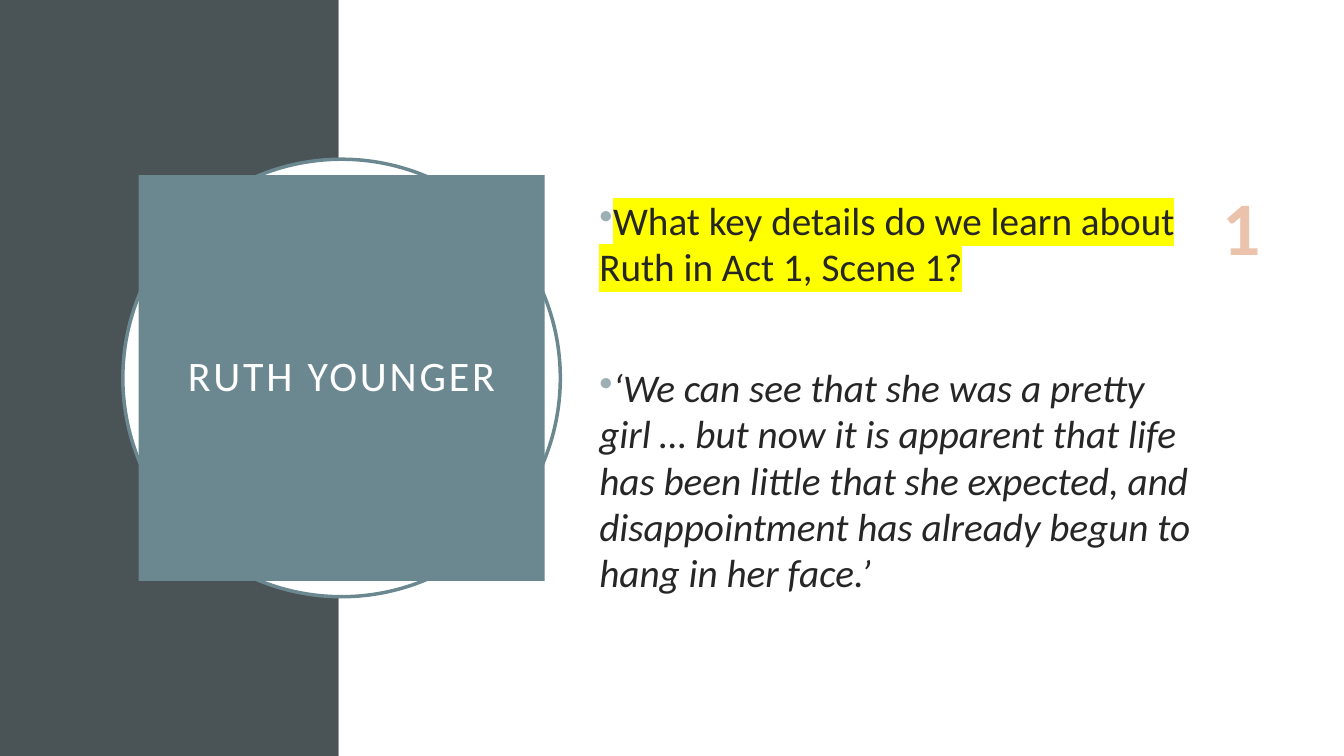
from lxml.etree import SubElement
from pptx import Presentation
from pptx.dml.color import RGBColor
from pptx.enum.shapes import MSO_SHAPE
from pptx.enum.text import MSO_ANCHOR, PP_ALIGN
from pptx.oxml.ns import qn
from pptx.util import Pt

TITLE = "RUTH YOUNGER"
NUMBER = "1"
POINTS = [
    {"text": "What key details do we learn about Ruth in Act 1, Scene 1?",
     "mark": True, "italic": False},
    {"text": "‘We can see that she was a pretty girl … but now it is apparent "
             "that life has been little that she expected, and disappointment "
             "has already begun to hang in her face.’",
     "mark": False, "italic": True},
]
THEME = {
    "font": "Calibri", "title": 30, "body": 28, "number": 54,
    "dark": "4A5356", "teal": "6B8891", "white": "FFFFFF", "ink": "262626",
    "bullet": "9BAFB5", "mark": "FFFF00", "peach": "EBC2AB",
}
WIDE, HIGH = 960, 540
BAND = 242
RING, PANEL = 312.5, 290
MID_X, MID_Y = 244, 270


def paint(name):
    return RGBColor.from_string(THEME[name])


def style(para, size, color, bold=False, italic=False):
    font = para.font
    font.name = THEME["font"]
    font.size = Pt(THEME[size])
    font.color.rgb = paint(color)
    font.bold = bold
    font.italic = italic


def shape(slide, kind, box, fill, line=None):
    item = slide.shapes.add_shape(kind, *map(Pt, box))
    item.shadow.inherit = False
    item.fill.solid()
    item.fill.fore_color.rgb = paint(fill)
    if line:
        item.line.color.rgb = paint(line)
        item.line.width = Pt(2.5)
    else:
        item.line.fill.background()
    return item


def square(side):
    return MID_X - side / 2, MID_Y - side / 2, side, side


def tint(parent, tag, name):
    SubElement(SubElement(parent, qn(tag)), qn("a:srgbClr")).set("val", THEME[name])


def bullet(para):
    props = para._p.get_or_add_pPr()
    props.set("marL", "0")
    props.set("indent", "0")
    tint(props, "a:buClr", "bullet")
    SubElement(props, qn("a:buChar")).set("char", "•")


def title(slide):
    panel = shape(slide, MSO_SHAPE.RECTANGLE, square(PANEL), "teal")
    frame = panel.text_frame
    frame.word_wrap = True
    frame.vertical_anchor = MSO_ANCHOR.MIDDLE
    para = frame.paragraphs[0]
    para.alignment = PP_ALIGN.CENTER
    para.line_spacing = 0.9
    style(para, "title", "white")
    run = para.add_run()
    run.text = TITLE
    run._r.get_or_add_rPr().set("spc", "200")


def body(slide):
    box = slide.shapes.add_textbox(Pt(421), Pt(110), Pt(438), Pt(383))
    frame = box.text_frame
    frame.word_wrap = True
    frame.margin_top = Pt(32)
    for index, point in enumerate(POINTS):
        para = frame.add_paragraph() if index else frame.paragraphs[0]
        bullet(para)
        para.line_spacing = 0.98
        if index:
            para.space_before = Pt(53.5)
        style(para, "body", "ink", italic=point["italic"])
        run = para.add_run()
        run.text = point["text"]
        if point["mark"]:
            tint(run._r.get_or_add_rPr(), "a:highlight", "mark")


def number(slide):
    box = slide.shapes.add_textbox(Pt(865), Pt(125), Pt(44.5), Pt(73))
    frame = box.text_frame
    frame.word_wrap = False
    para = frame.paragraphs[0]
    para.alignment = PP_ALIGN.CENTER
    style(para, "number", "peach", bold=True)
    para.add_run().text = NUMBER


def main():
    deck = Presentation()
    deck.slide_width, deck.slide_height = Pt(WIDE), Pt(HIGH)
    slide = deck.slides.add_slide(deck.slide_layouts[6])
    shape(slide, MSO_SHAPE.RECTANGLE, (0, 0, BAND, HIGH), "dark")
    shape(slide, MSO_SHAPE.RECTANGLE, (BAND, 0, WIDE - BAND, HIGH), "white")
    shape(slide, MSO_SHAPE.OVAL, square(RING), "white", "teal")
    title(slide)
    body(slide)
    number(slide)
    deck.save("out.pptx")


if __name__ == "__main__":
    main()
